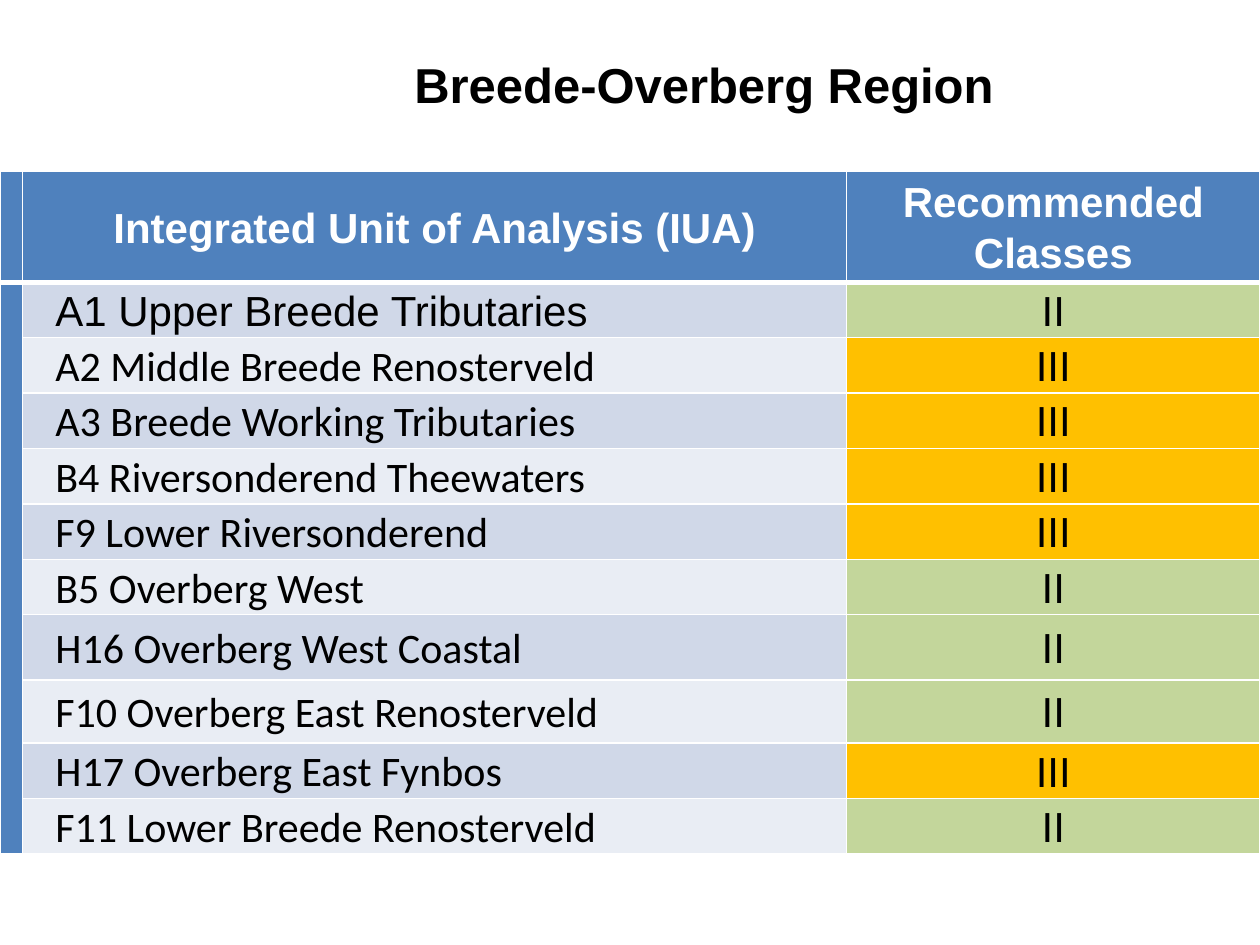
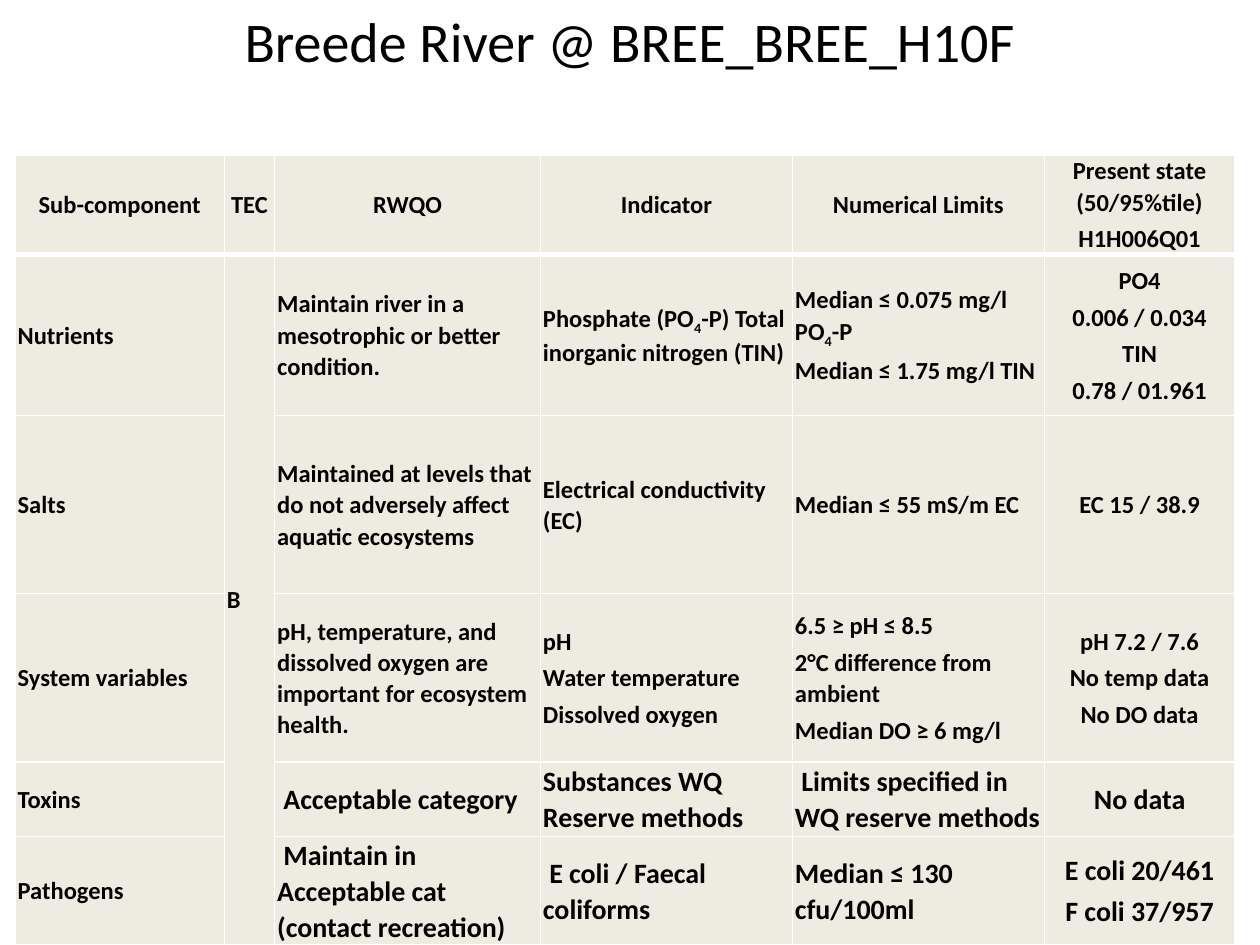
import dataclasses
import typing

import lxml.etree
import pptx
import pptx.dml.color
import pptx.enum.text
import pptx.oxml.ns
import pptx.util

ALIGN = pptx.enum.text.PP_ALIGN
ANCHOR = pptx.enum.text.MSO_ANCHOR
AUTO_SIZE = pptx.enum.text.MSO_AUTO_SIZE


# Colours, fonts and type sizes
@dataclasses.dataclass(frozen=True)
class Theme:
    ink: str = "000000"
    white: str = "FFFFFF"
    header_blue: str = "4F81BD"
    band_dark: str = "D0D8E8"
    band_light: str = "E9EDF4"
    beige: str = "EEECE1"
    heading_font: str = "Arial"
    body_font: str = "Calibri"
    region_title: int = 28
    river_title: int = 32
    region_text: int = 24
    river_text: int = 14
    river_large: int = 16
    thin_border: int = 1
    header_border: int = 3


THEME = Theme()
CLASS_COLOURS = {"II": "C3D69B", "III": "FFC000"}

# Slide grid
SLIDE_WIDTH = pptx.util.Inches(10)
SLIDE_HEIGHT = pptx.util.Inches(7.5)
GRID_COLUMNS = 1000
GRID_ROWS = 750


def across(columns: float) -> int:
    return round(SLIDE_WIDTH * columns / GRID_COLUMNS)


def down(rows: float) -> int:
    return round(SLIDE_HEIGHT * rows / GRID_ROWS)


class Box(typing.NamedTuple):
    left: int
    top: int
    width: int
    height: int


@dataclasses.dataclass
class Cell:
    fill: str
    text: str = ""
    text_format: dict[str, typing.Any] = dataclasses.field(default_factory=dict)


@dataclasses.dataclass
class TableLayout:
    left: int
    top: int
    columns: list[int]
    rows: list[int]
    side_margin: int
    merged_column: int


def write_text(frame, text: str, *, size: int, font: str = THEME.body_font,
               colour: str = THEME.ink, bold: bool = False,
               align=ALIGN.LEFT, line_spacing: float = 1.0,
               space_before: int = 0, indent: int = 0,
               first_line: int = 0) -> None:
    """Newlines separate paragraphs; text between tildes is subscript."""
    for number, line in enumerate(text.split("\n")):
        paragraph = frame.add_paragraph() if number else frame.paragraphs[0]
        paragraph.alignment = align
        paragraph.line_spacing = line_spacing
        paragraph.space_before = pptx.util.Pt(space_before if number else 0)
        properties = paragraph._p.get_or_add_pPr()
        properties.set("marL", str(across(indent)))
        properties.set("indent", str(across(first_line)))
        for part, words in enumerate(line.split("~")):
            run = paragraph.add_run()
            run.text = words
            run.font.name = font
            run.font.size = pptx.util.Pt(size)
            run.font.bold = bold
            run.font.color.rgb = pptx.dml.color.RGBColor.from_string(colour)
            if part % 2:
                run._r.get_or_add_rPr().set("baseline", "-25000")


def add_title(slide, box: Box, text: str, *, wrap: bool,
              **text_format: typing.Any) -> None:
    shape = slide.shapes.add_textbox(across(box.left), down(box.top),
                                     across(box.width), down(box.height))
    frame = shape.text_frame
    frame.word_wrap = wrap
    frame.auto_size = AUTO_SIZE.NONE if wrap else AUTO_SIZE.SHAPE_TO_FIT_TEXT
    write_text(frame, text, **text_format)


def set_borders(table_cell, top: int, bottom: int) -> None:
    properties = table_cell._tc.get_or_add_tcPr()
    name = pptx.oxml.ns.qn
    thin = THEME.thin_border
    for side, points in (("L", thin), ("R", thin), ("T", top), ("B", bottom)):
        line = lxml.etree.SubElement(properties, name(f"a:ln{side}"),
                                     w=str(pptx.util.Pt(points)))
        fill = lxml.etree.SubElement(line, name("a:solidFill"))
        lxml.etree.SubElement(fill, name("a:srgbClr"), val=THEME.white)


def add_grid_table(slide, layout: TableLayout, cells: list[list[Cell]]) -> None:
    table = slide.shapes.add_table(
        len(layout.rows), len(layout.columns),
        across(layout.left), down(layout.top),
        across(sum(layout.columns)), down(sum(layout.rows))).table
    table.first_row = table.horz_banding = False
    for column, width in zip(table.columns, layout.columns):
        column.width = across(width)
    for row, height in zip(table.rows, layout.rows):
        row.height = down(height)

    for row_number, row_cells in enumerate(cells):
        for column_number, cell in enumerate(row_cells):
            table_cell = table.cell(row_number, column_number)
            set_borders(
                table_cell,
                top=THEME.header_border if row_number == 1 else THEME.thin_border,
                bottom=THEME.header_border if row_number == 0 else THEME.thin_border)
            table_cell.fill.solid()
            table_cell.fill.fore_color.rgb = (
                pptx.dml.color.RGBColor.from_string(cell.fill))
            table_cell.vertical_anchor = ANCHOR.MIDDLE
            table_cell.margin_left = table_cell.margin_right = across(layout.side_margin)
            table_cell.margin_top = table_cell.margin_bottom = 0
            if cell.text:
                write_text(table_cell.text_frame, cell.text, **cell.text_format)

    # One cell spans every row below the header
    table.cell(1, layout.merged_column).merge(
        table.cell(len(layout.rows) - 1, layout.merged_column))


# Slide 1: units of analysis and their classes
REGION_UNITS = [
    ("A1 Upper Breede Tributaries", "II"),
    ("A2 Middle Breede Renosterveld", "III"),
    ("A3 Breede Working Tributaries", "III"),
    ("B4 Riversonderend Theewaters", "III"),
    ("F9 Lower Riversonderend", "III"),
    ("B5 Overberg West", "II"),
    ("H16 Overberg West Coastal", "II"),
    ("F10 Overberg East Renosterveld", "II"),
    ("H17 Overberg East Fynbos", "III"),
    ("F11 Lower Breede Renosterveld", "II"),
]
REGION_LAYOUT = TableLayout(left=0, top=136, columns=[18, 654, 328],
                            rows=[88] + [44] * 6 + [52, 50] + [44] * 2,
                            side_margin=7, merged_column=0)


def build_region_slide(slide) -> None:
    base = dict(size=THEME.region_text, line_spacing=1.07)
    centred = dict(base, font=THEME.heading_font, align=ALIGN.CENTER)
    header = dict(centred, colour=THEME.white, bold=True)
    cells = [[Cell(THEME.header_blue, text, header) for text in
              ("", "Integrated Unit of Analysis (IUA)", "Recommended Classes")]]
    for number, (unit, unit_class) in enumerate(REGION_UNITS):
        band = THEME.band_light if number % 2 else THEME.band_dark
        font = THEME.body_font if number else THEME.heading_font
        cells.append([
            Cell(THEME.header_blue),
            Cell(band, unit, dict(base, font=font, indent=19)),
            Cell(CLASS_COLOURS[unit_class], unit_class, centred),
        ])
    add_grid_table(slide, REGION_LAYOUT, cells)
    add_title(slide, Box(319, 38, 486, 57), "Breede-Overberg Region", wrap=False,
              size=THEME.region_title, font=THEME.heading_font, bold=True)


# Slide 2: water quality objectives at one river node
RIVER_HEADER = ["Sub-component", "TEC", "RWQO", "Indicator", "Numerical Limits",
                "Present state (50/95%tile)\nH1H006Q01"]
RIVER_ROWS = [
    ["Nutrients", "B", "Maintain river in a mesotrophic or better condition.",
     "Phosphate (PO~4~-P) Total inorganic nitrogen (TIN)",
     "Median ≤ 0.075 mg/l PO~4~-P\nMedian ≤ 1.75 mg/l TIN",
     "PO4\n0.006 / 0.034\nTIN\n0.78 / 01.961"],
    ["Salts", "",
     "Maintained at levels that do not adversely affect aquatic ecosystems",
     "Electrical conductivity (EC)", "Median ≤ 55 mS/m EC", "EC 15 / 38.9"],
    ["System variables", "",
     "pH, temperature, and dissolved oxygen are important for ecosystem health.",
     "pH\nWater temperature\nDissolved oxygen",
     "6.5 ≥ pH ≤ 8.5\n2°C difference from ambient\nMedian DO ≥ 6 mg/l",
     "pH 7.2 / 7.6\nNo temp data\nNo DO data"],
    ["Toxins", "", "Acceptable category", "Substances WQ Reserve methods",
     "Limits specified in WQ reserve methods", "No data"],
    ["Pathogens", "", "Maintain in Acceptable cat (contact recreation)",
     "E coli / Faecal coliforms", "Median ≤ 130 cfu/100ml",
     "E coli 20/461\nF coli 37/957"],
]
LARGE_TEXT_ROWS = ("Toxins", "Pathogens")
INDENTED_CELLS = {("Toxins", 2), ("Toxins", 4), ("Pathogens", 2), ("Pathogens", 3)}
RIVER_LAYOUT = TableLayout(left=12, top=123, columns=[166, 40, 211, 200, 200, 151],
                           rows=[79, 128, 141, 134, 59, 86],
                           side_margin=2, merged_column=1)


def build_river_slide(slide) -> None:
    base = dict(size=THEME.river_text, bold=True, line_spacing=1.05, space_before=3)
    header = dict(base, align=ALIGN.CENTER)
    cells = [[Cell(THEME.beige, text, header) for text in RIVER_HEADER]]
    last_column = len(RIVER_HEADER) - 1
    for texts in RIVER_ROWS:
        component = texts[0]
        row_cells = []
        for column, text in enumerate(texts):
            large = component in LARGE_TEXT_ROWS and column > 0
            row_cells.append(Cell(THEME.beige, text, dict(
                base,
                size=THEME.river_large if large else THEME.river_text,
                align=ALIGN.CENTER if column == last_column else ALIGN.LEFT,
                first_line=5 if (component, column) in INDENTED_CELLS else 0)))
        cells.append(row_cells)
    add_title(slide, Box(50, 0, 900, 124), "Breede River @ BREE_BREE_H10F",
              wrap=True, size=THEME.river_title, align=ALIGN.CENTER)
    add_grid_table(slide, RIVER_LAYOUT, cells)


def main() -> None:
    presentation = pptx.Presentation()
    presentation.slide_width = SLIDE_WIDTH
    presentation.slide_height = SLIDE_HEIGHT
    blank_layout = presentation.slide_layouts[6]
    for build_slide in (build_region_slide, build_river_slide):
        build_slide(presentation.slides.add_slide(blank_layout))
    presentation.save("out.pptx")


if __name__ == "__main__":
    main()
